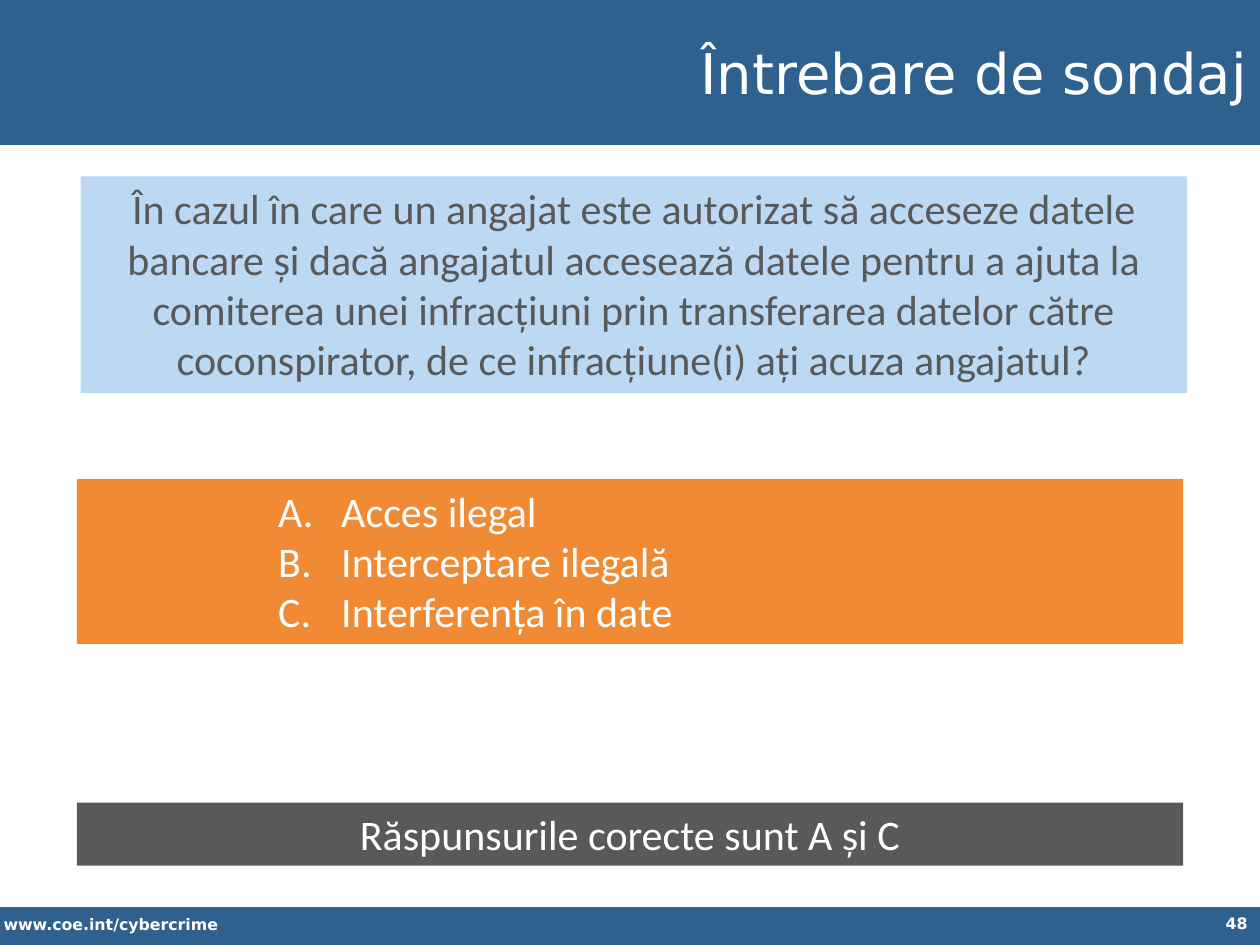
from lxml import etree
from pptx import Presentation
from pptx.dml.color import RGBColor
from pptx.enum.shapes import MSO_SHAPE
from pptx.enum.text import MSO_ANCHOR, MSO_AUTO_SIZE, PP_ALIGN
from pptx.oxml.ns import qn
from pptx.util import Inches, Pt

RECTANGLE = MSO_SHAPE.RECTANGLE
TOP, MIDDLE = MSO_ANCHOR.TOP, MSO_ANCHOR.MIDDLE
LEFT, CENTER, RIGHT = PP_ALIGN.LEFT, PP_ALIGN.CENTER, PP_ALIGN.RIGHT
NO_AUTOFIT = MSO_AUTO_SIZE.NONE

NAVY = RGBColor(0x2F, 0x61, 0x8F)
LIGHT_BLUE = RGBColor(0xBD, 0xD8, 0xF3)
ORANGE = RGBColor(0xF0, 0x8A, 0x34)
GRAY = RGBColor(0x59, 0x59, 0x59)
WHITE = RGBColor(0xFF, 0xFF, 0xFF)

BODY_FONT = "Calibri"
BRAND_FONT = "DejaVu Sans"

QUESTION = (
    "În cazul în care un angajat este autorizat să acceseze datele bancare și dacă "
    "angajatul accesează datele pentru a ajuta la comiterea unei infracțiuni prin "
    "transferarea datelor către coconspirator, de ce infracțiune(i) ați acuza angajatul?"
)
OPTIONS = ["Acces ilegal", "Interceptare ilegală", "Interferența în date"]
ANSWER = "Răspunsurile corecte sunt A și C"


def add_panel(slide, left, top, width, height, color):
    """Add a plain filled rectangle."""
    panel = slide.shapes.add_shape(
        RECTANGLE, Inches(left), Inches(top), Inches(width), Inches(height)
    )
    panel.shadow.inherit = False
    panel.fill.solid()
    panel.fill.fore_color.rgb = color
    panel.line.fill.background()
    return panel


def write_lines(shape, lines, size, color, alignment, font=BODY_FONT, bold=False, anchor=TOP):
    """Write one paragraph per line into a shape."""
    frame = shape.text_frame
    frame.word_wrap = True
    frame.auto_size = NO_AUTOFIT
    frame.vertical_anchor = anchor
    for index, line in enumerate(lines):
        paragraph = frame.add_paragraph() if index else frame.paragraphs[0]
        paragraph.alignment = alignment
        run = paragraph.add_run()
        run.text = line
        run.font.name = font
        run.font.size = Pt(size)
        run.font.bold = bold
        run.font.color.rgb = color


def letter_paragraphs(shape, indent, hanging):
    """Number the paragraphs of a shape with capital letters."""
    for paragraph in shape.text_frame.paragraphs:
        paragraph.level = 3
        properties = paragraph._p.get_or_add_pPr()
        properties.set("marL", str(Inches(indent)))
        properties.set("indent", str(-Inches(hanging)))
        etree.SubElement(properties, qn("a:buFont"), typeface="+mj-lt")
        etree.SubElement(properties, qn("a:buAutoNum"), type="alphaUcPeriod")


def add_footer_text(slide, left, top, width, height, text, alignment):
    """Add a small bold label on the footer band."""
    label = slide.shapes.add_textbox(
        Inches(left), Inches(top), Inches(width), Inches(height)
    )
    write_lines(label, [text], 9, WHITE, alignment, BRAND_FONT, True)


def place_title(slide, text):
    """Format the title placeholder and bring it in front of the header band."""
    title = slide.shapes.title
    title.left, title.top = Inches(2.2), Inches(0.07)
    title.width, title.height = Inches(7.8), Inches(1.01)
    title.fill.solid()
    title.fill.fore_color.rgb = NAVY
    write_lines(title, [text], 32, WHITE, RIGHT, BRAND_FONT, anchor=MIDDLE)
    title.element.getparent().append(title.element)


def main():
    """Build the poll question slide."""
    presentation = Presentation()
    presentation.slide_width = Inches(10)
    presentation.slide_height = Inches(7.5)
    slide = presentation.slides.add_slide(presentation.slide_layouts[5])

    add_panel(slide, 0, -0.03, 10, 1.18, NAVY)
    add_panel(slide, 0, 7.2, 10, 0.32, NAVY)
    add_footer_text(slide, -0.07, 7.21, 3.52, 0.25, "www.coe.int/cybercrime", LEFT)
    add_footer_text(slide, 7.75, 7.2, 2.25, 0.31, "48", RIGHT)

    question = add_panel(slide, 0.64, 1.4, 8.78, 1.72, LIGHT_BLUE)
    write_lines(question, [QUESTION], 24, GRAY, CENTER)
    answer = add_panel(slide, 0.61, 6.37, 8.78, 0.5, GRAY)
    write_lines(answer, [ANSWER], 24, WHITE, CENTER)
    options = add_panel(slide, 0.61, 3.8, 8.78, 1.31, ORANGE)
    write_lines(options, OPTIONS, 24, WHITE, LEFT)
    letter_paragraphs(options, 2, 0.5)

    place_title(slide, "Întrebare de sondaj")
    presentation.save("out.pptx")


if __name__ == "__main__":
    main()
